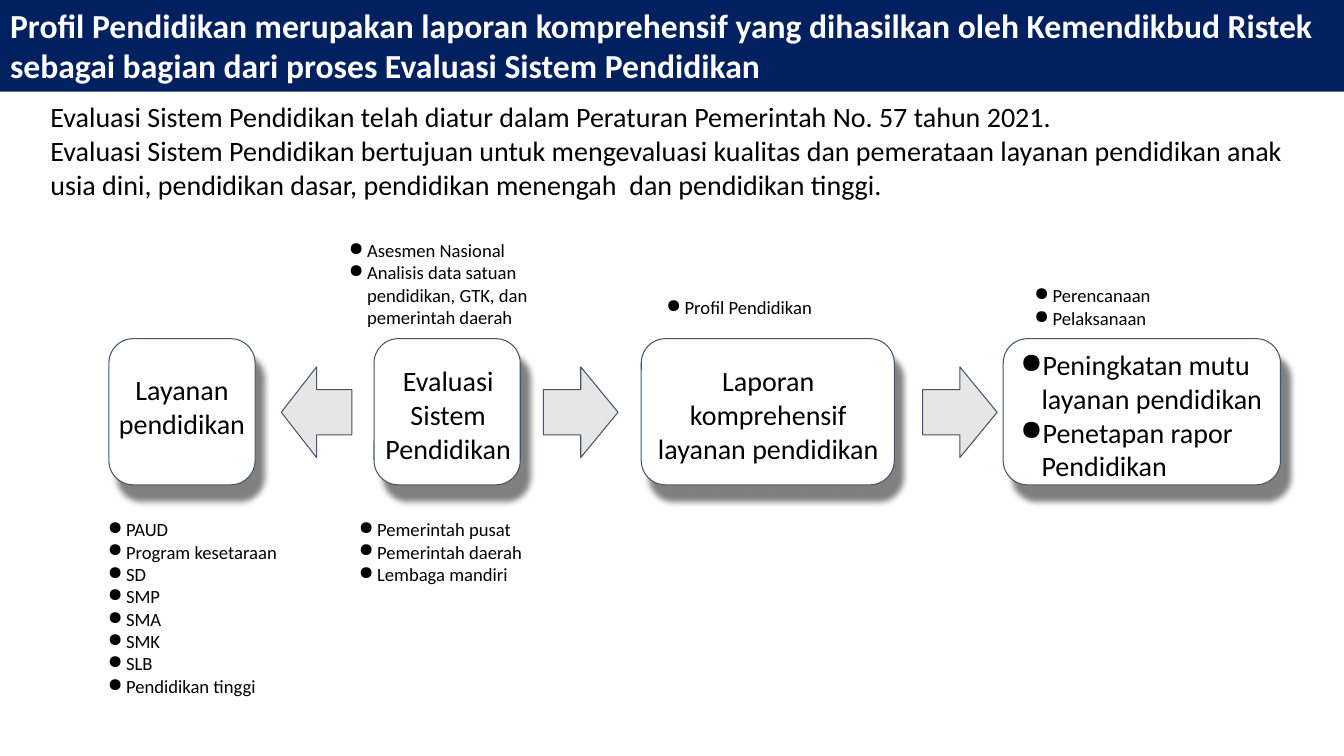
"""Build the slide on the education profile and the evaluation process."""
from dataclasses import dataclass
from pptx import Presentation
from pptx.dml.color import RGBColor
from pptx.enum.shapes import MSO_SHAPE
from pptx.enum.text import MSO_ANCHOR, MSO_AUTO_SIZE, PP_ALIGN
from pptx.oxml.ns import qn
from pptx.oxml.xmlchemy import OxmlElement
from pptx.shapes.autoshape import Shape
from pptx.slide import Slide
from pptx.text.text import TextFrame
from pptx.util import Pt

SCALE = 9144
FONT = "Calibri"
HUES = {"navy": "002060", "white": "FFFFFF", "black": "000000",
        "slate": "44546A", "grey": "E7E6E6"}
TITLE = ("Profil Pendidikan merupakan laporan komprehensif yang dihasilkan oleh "
         "Kemendikbud Ristek sebagai bagian dari proses Evaluasi Sistem Pendidikan")


@dataclass(frozen=True)
class Card:
    """A rounded step box, by left edge, width and shadow angle."""
    left: int
    width: int
    angle: int = 60


@dataclass(frozen=True)
class Arrow:
    """A block arrow between two cards."""
    left: int
    width: int
    kind: MSO_SHAPE = MSO_SHAPE.RIGHT_ARROW


@dataclass(frozen=True)
class Note:
    """A text box with one or more lines; hang above zero gives bullets."""
    left: int
    top: int
    width: int
    height: int
    lines: tuple[str, ...]
    size: float = 20
    hang: int = 0
    inset: int = 13
    align: PP_ALIGN = PP_ALIGN.LEFT
    anchor: MSO_ANCHOR = MSO_ANCHOR.TOP


def label(left: int, top: int, width: int, height: int, text: str) -> Note:
    """Return the centred text of a card."""
    return Note(left, top, width, height, (text,), align=PP_ALIGN.CENTER)


def points(left: int, top: int, width: int, height: int, *lines: str) -> Note:
    """Return a small bullet list."""
    return Note(left, top, width, height, lines, 13.3, 18, 0)


CARDS = (Card(995, 275), Card(636, 251, 63), Card(371, 145), Card(108, 145))
ARROWS = (Arrow(279, 70, MSO_SHAPE.LEFT_ARROW), Arrow(539, 74), Arrow(915, 74))
NOTES = (
    Note(37, 73, 1260, 152, (
        "Evaluasi Sistem Pendidikan telah diatur dalam Peraturan Pemerintah "
        "No. 57 tahun 2021.",
        "Evaluasi Sistem Pendidikan bertujuan untuk mengevaluasi kualitas dan "
        "pemerataan layanan pendidikan anak usia dini, pendidikan dasar, "
        "pendidikan menengah  dan pendidikan tinggi."),
        anchor=MSO_ANCHOR.MIDDLE),
    label(100, 357, 161, 94, "Layanan pendidikan"),
    label(364, 348, 161, 128, "Evaluasi Sistem Pendidikan"),
    label(635, 348, 254, 128, "Laporan komprehensif layanan pendidikan"),
    Note(995, 332, 291, 162, ("Peningkatan mutu layanan pendidikan",
                              "Penetapan rapor Pendidikan"), hang=21),
    points(100, 501, 211, 206, "PAUD", "Program kesetaraan", "SD", "SMP", "SMA",
           "SMK", "SLB", "Pendidikan tinggi"),
    points(349, 501, 211, 94, "Pemerintah pusat", "Pemerintah daerah",
           "Lembaga mandiri"),
    points(339, 224, 245, 117, "Asesmen Nasional",
           "Analisis data satuan pendidikan, GTK, dan pemerintah daerah"),
    points(654, 281, 211, 49, "Profil Pendidikan"),
    points(1019, 269, 211, 72, "Perencanaan", "Pelaksanaan"),
)


def px(*sizes: int) -> tuple[int, ...]:
    """Turn px into EMU."""
    return tuple(size * SCALE for size in sizes)


def hue(name: str) -> RGBColor:
    """Look up a colour by name."""
    return RGBColor.from_string(HUES[name])


def write(frame: TextFrame, lines: tuple[str, ...], size: float, tint: str,
          align: PP_ALIGN, bold: bool = False, hang: int = 0) -> None:
    """Write each line as a paragraph with a single run."""
    frame.word_wrap = True
    for spot, line in enumerate(lines):
        para = frame.add_paragraph() if spot else frame.paragraphs[0]
        para.alignment = align
        run = para.add_run()
        run.text = line
        font = run.font
        font.name, font.size, font.bold = FONT, Pt(size), bold
        font.color.rgb = hue(tint)
        if hang:
            props = para._p.get_or_add_pPr()
            props.set("marL", str(25 * SCALE))
            props.set("indent", str(-hang * SCALE))
            mark = OxmlElement("a:buChar")
            mark.set("char", "●")
            props.append(mark)


def draw_title(slide: Slide) -> None:
    """Turn the title placeholder into the navy band."""
    band = slide.shapes.title
    band.left, band.top, band.width, band.height = px(0, 0, 1333, 91)
    band.fill.solid()
    band.fill.fore_color.rgb = hue("navy")
    frame = band.text_frame
    frame.auto_size = MSO_AUTO_SIZE.NONE
    frame.vertical_anchor = MSO_ANCHOR.TOP
    frame.margin_left, frame.margin_right = px(10, 10)
    frame.margin_top, frame.margin_bottom = px(5, 5)
    write(frame, (TITLE,), 24, "white", PP_ALIGN.LEFT, bold=True)


def draw_shape(slide: Slide, kind: MSO_SHAPE, box: tuple[int, ...],
               tint: str) -> Shape:
    """Draw a filled shape with a thin slate outline."""
    shape = slide.shapes.add_shape(kind, *px(*box))
    shape.shadow.inherit = False
    shape.fill.solid()
    shape.fill.fore_color.rgb = hue(tint)
    shape.line.color.rgb = hue("slate")
    shape.line.width = Pt(0.75)
    return shape


def cast(shape: Shape, angle: int) -> None:
    """Give a shape a soft half-clear black shadow."""
    shade = OxmlElement("a:outerShdw")
    for key, value in (("blurRad", Pt(4.5)), ("dist", Pt(12.8)),
                       ("dir", angle * 60000)):
        shade.set(key, str(int(value)))
    tone = OxmlElement("a:srgbClr")
    tone.set("val", HUES["black"])
    alpha = OxmlElement("a:alpha")
    alpha.set("val", "50000")
    tone.append(alpha)
    shade.append(tone)
    shape._element.spPr.find(qn("a:effectLst")).append(shade)


def draw_note(slide: Slide, note: Note) -> None:
    """Draw a text box."""
    box = slide.shapes.add_textbox(
        *px(note.left, note.top, note.width, note.height))
    frame = box.text_frame
    frame.auto_size = MSO_AUTO_SIZE.NONE
    frame.vertical_anchor = note.anchor
    frame.margin_left, frame.margin_right = px(note.inset, 13)
    frame.margin_top, frame.margin_bottom = px(13, 13)
    write(frame, note.lines, note.size, "black", note.align, hang=note.hang)


def main() -> None:
    """Build and save the slide."""
    deck = Presentation()
    deck.slide_width, deck.slide_height = px(1333, 750)
    slide = deck.slides.add_slide(deck.slide_layouts[5])
    draw_title(slide)
    for card in CARDS:
        box = (card.left, 336, card.width, 145)
        cast(draw_shape(slide, MSO_SHAPE.ROUNDED_RECTANGLE, box, "white"),
             card.angle)
    for arrow in ARROWS:
        draw_shape(slide, arrow.kind, (arrow.left, 364, arrow.width, 90), "grey")
    for note in NOTES:
        draw_note(slide, note)
    deck.save("out.pptx")


if __name__ == "__main__":
    main()
